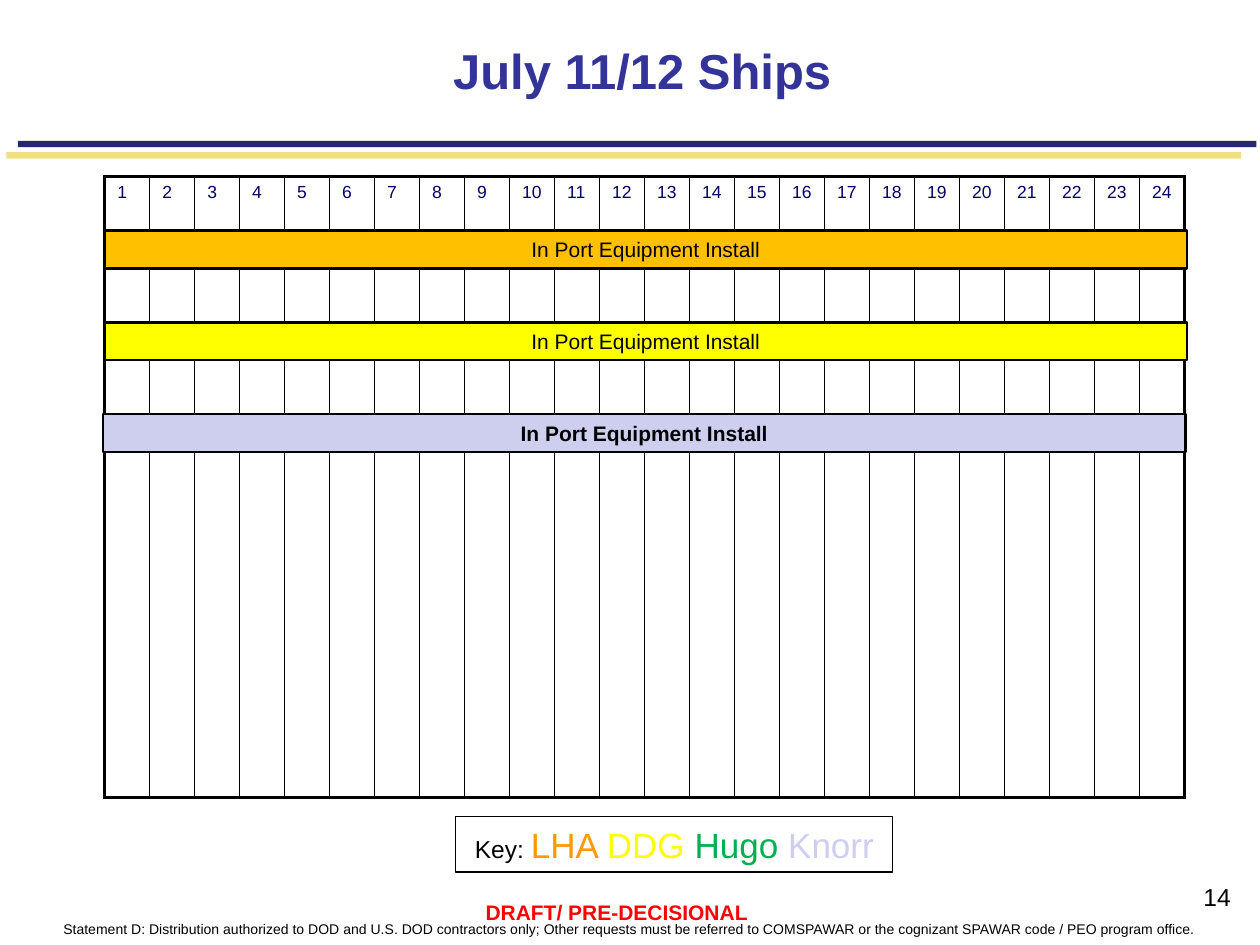
"""Build the July 11/12 ship schedule slide."""
from lxml import etree
from pptx import Presentation, util as u
from pptx.dml.color import RGBColor
from pptx.enum import shapes, text
from pptx.oxml.ns import qn


def tint(code):
    """Turn a hex string into a colour."""
    return RGBColor.from_string(code)


def write(shape, parts, anchor="TOP", grow=True, wrap=True, align="CENTER"):
    """Write runs of (words, size, colour, bold) into a shape or cell."""
    frame = shape.text_frame
    look = {"word_wrap": wrap, "vertical_anchor": text.MSO_ANCHOR[anchor]}
    if grow:
        look["auto_size"] = text.MSO_AUTO_SIZE.SHAPE_TO_FIT_TEXT
    for key, val in look.items():
        setattr(frame, key, val)
    para = frame.paragraphs[0]
    para.alignment = text.PP_ALIGN[align]
    for words, size, code, bold in parts:
        run = para.add_run()
        run.text = words
        for key, val in {"name": "Arial", "size": u.Pt(size), "bold": bold}.items():
            setattr(run.font, key, val)
        run.font.color.rgb = tint(code)


deck = Presentation()
deck.slide_width, deck.slide_height = u.Cm(25.4), u.Cm(19.05)
slide = deck.slides.add_slide(deck.slide_layouts[5])
items = slide.shapes

title = items.title
spots = {"left": 4.88, "top": 0.63, "width": 16.13, "height": 1.37}
for key, val in spots.items():
    setattr(title, key, u.Cm(val))
for side in ("left", "top", "right", "bottom"):
    setattr(title.text_frame, f"margin_{side}", 0)
write(title, [("July 11/12 Ships", 28, "333399", True)], "BOTTOM", grow=False)

notes = [
    ((0, 18.44, 25.4, 0.58), "Statement D: Distribution authorized to DOD and U.S. DOD "
     "contractors only; Other requests must be referred to COMSPAWAR or the cognizant "
     "SPAWAR code / PEO program office.", 8, "000000", False, True),
    ((23.67, 17.65, 1.73, 1.27), "14", 14, "000000", False, True),
    ((9.5, 18.01, 5.87, 0.76), "DRAFT/ PRE-DECISIONAL", 12, "FF0000", True, False),
]
for place, words, size, code, bold, wrap in notes:
    box = items.add_textbox(*map(u.Cm, place))
    write(box, [(words, size, code, bold)], grow=words != "14", wrap=wrap)

days = 24
grid = items.add_table(2, days, *map(u.Cm, (2.11, 3.56, 21.79, 12.52))).table
grid.first_row = grid.horz_banding = False
for row, high in zip(grid.rows, (1.07, 11.45)):
    row.height = u.Cm(high)
for col in range(days):
    grid.columns[col].width = u.Cm(21.79 / days)
    for row in range(2):
        cell = grid.cell(row, col)
        cell.margin_right = 0
        if row == 0:
            write(cell, [(str(col + 1), 10, "000066", False)], grow=False, align="LEFT")
        outer = {"L": col == 0, "R": col == days - 1, "T": row == 0, "B": row == 1}
        props = cell._tc.get_or_add_tcPr()
        for side, edge in outer.items():
            line = etree.SubElement(props, qn(f"a:ln{side}"), w=str(u.Pt(2.25 if edge else 1)))
            fill = etree.SubElement(line, qn("a:solidFill"))
            etree.SubElement(fill, qn("a:srgbClr"), val="000000")
        cell.fill.background()

label = "In Port Equipment Install"
legend = [("Key: ", 14, "000000", False), ("LHA ", 20, "FF9900", False),
          ("DDG", 20, "FFFF00", False), (" Hugo ", 20, "00B050", False),
          ("Knorr", 20, "CECEEF", False)]
rects = [
    ((0.13, 3.07, 24.89, 0.13), "EEE07F", 0, []),
    ((0.36, 2.84, 24.97, 0.13), "262673", 0, []),
    ((9.19, 16.46, 8.81, 1.12), "FFFFFF", 0.75, legend),
]
bars = [(2.11, "FFC000", False), (2.11, "FFFF00", False), (2.08, "CECEEF", True)]
for num, (left, code, bold) in enumerate(bars):
    place = (left, 4.65 + 1.85 * num, 21.82, 0.76)
    rects.append((place, code, 1.5, [(label, 12, "000000", bold)]))
for place, code, width, parts in rects:
    rect = items.add_shape(shapes.MSO_SHAPE.RECTANGLE, *map(u.Cm, place))
    rect.shadow.inherit = False
    rect.fill.solid()
    rect.fill.fore_color.rgb = tint(code)
    if width:
        rect.line.color.rgb = tint("000000")
        rect.line.width = u.Pt(width)
        write(rect, parts, "MIDDLE", wrap=parts is not legend)
    else:
        rect.line.fill.background()

deck.save("out.pptx")
